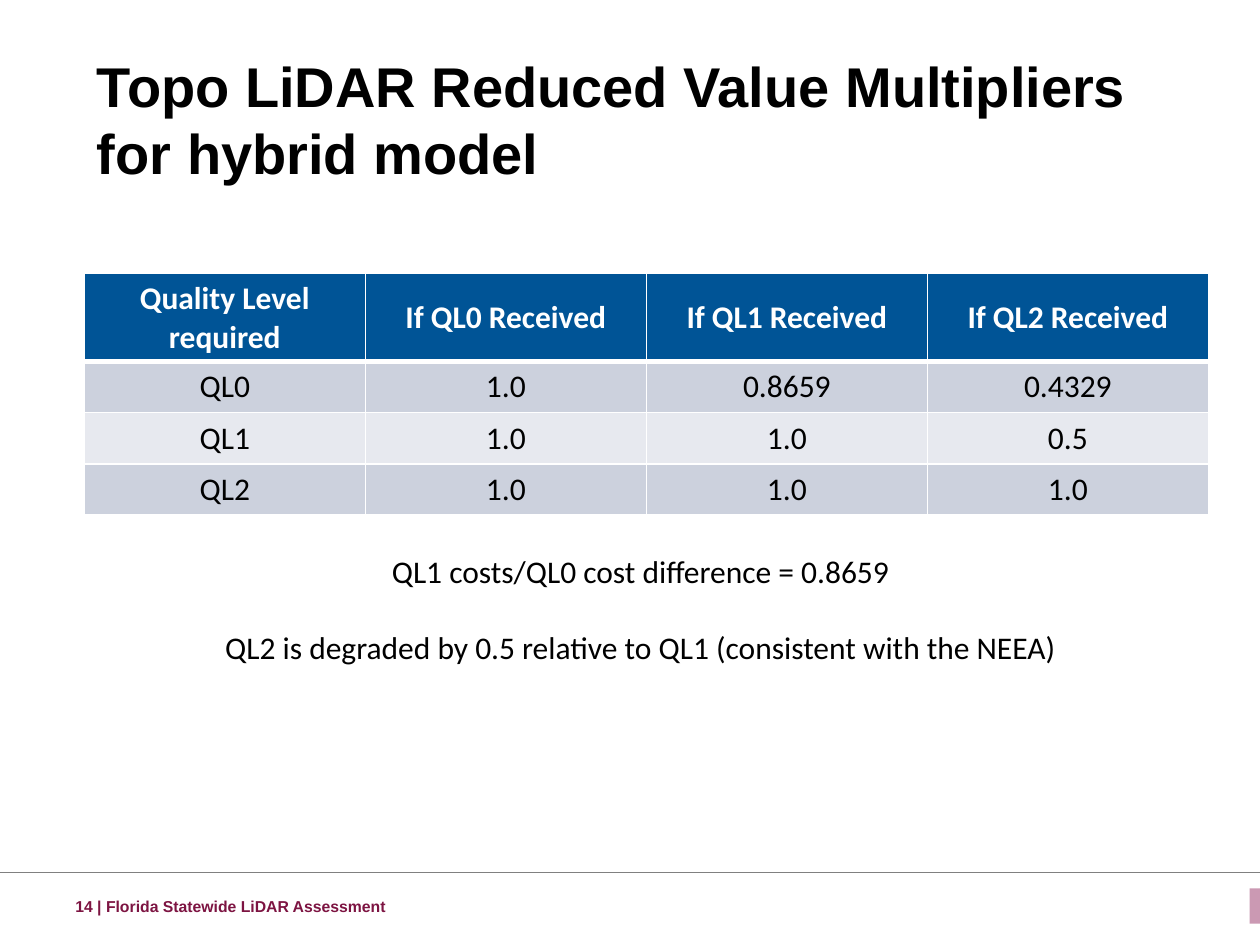
from typing import NamedTuple

from lxml.etree import SubElement
from pptx import Presentation
from pptx.dml.color import RGBColor
from pptx.enum.shapes import MSO_CONNECTOR as Line, MSO_SHAPE as Shape
from pptx.enum.text import MSO_ANCHOR as Anchor, MSO_AUTO_SIZE as Fit, PP_ALIGN as Align
from pptx.oxml.ns import qn
from pptx.util import Cm, Pt


class Box(NamedTuple):
    left: float
    top: float
    width: float
    height: float

    def lengths(self) -> list:
        return [Cm(value) for value in self]


class Look(NamedTuple):
    fill: str
    ink: str
    bold: bool


HEAD = Look("005496", "FFFFFF", True)
BANDS = [Look("CCD1DD", "000000", False), Look("E7E9EF", "000000", False)]
ROWS = [
    ["Quality Level required", "If QL0 Received", "If QL1 Received", "If QL2 Received"],
    ["QL0", "1.0", "0.8659", "0.4329"],
    ["QL1", "1.0", "1.0", "0.5"],
    ["QL2", "1.0", "1.0", "1.0"],
]
NOTES = [
    "QL1 costs/QL0 cost difference = 0.8659",
    "QL2 is degraded by 0.5 relative to QL1 (consistent with the NEEA)",
]


def paint(target, color: str) -> None:
    """Set a font or line colour, or a solid fill."""
    if hasattr(target, "solid"):
        target.solid()
        target = target.fore_color
    else:
        target = target.color
    target.rgb = RGBColor.from_string(color)


def style(par, color: str, align=Align.LEFT, **format) -> None:
    par.alignment = align
    for name, value in format.items():
        setattr(par.font, name, value)
    paint(par.font, color)


def place(shape, box: Box) -> None:
    for name, value in zip(box._fields, box.lengths()):
        setattr(shape, name, value)


def edge(cell, widths: dict) -> None:
    """Draw white borders; widths are points by side letter."""
    props = cell._tc.get_or_add_tcPr()
    for side, width in widths.items():
        line = SubElement(props, qn(f"a:ln{side}"), w=str(Pt(width)))
        SubElement(SubElement(line, qn("a:solidFill")), qn("a:srgbClr"), val="FFFFFF")


def add_grid(slide, box: Box) -> None:
    table = slide.shapes.add_table(len(ROWS), len(ROWS[0]), *box.lengths()).table
    for row in table.rows:
        row.height = Cm(1.03)
    table.rows[0].height = Cm(1.78)
    for r, texts in enumerate(ROWS):
        look = BANDS[(r - 1) % 2] if r else HEAD
        widths = {"L": 1, "R": 1, "T": 3 if r == 1 else 1, "B": 1 if r else 3}
        for c, text in enumerate(texts):
            cell = table.cell(r, c)
            cell.text = text
            cell.vertical_anchor = Anchor.MIDDLE
            edge(cell, widths)
            paint(cell.fill, look.fill)
            style(cell.text_frame.paragraphs[0], look.ink, Align.CENTER,
                  name="Calibri", size=Pt(18), bold=look.bold)


def add_text(slide, box: Box, lines: list[str], anchor, gap: int = 0):
    """Add a wrapped text box with a gap in points between its paragraphs."""
    frame = slide.shapes.add_textbox(*box.lengths()).text_frame
    frame.word_wrap = True
    frame.vertical_anchor = anchor
    frame.text = "\n".join(lines)
    for par in frame.paragraphs[1:]:
        par.space_before = Pt(gap)
    return frame


def add_trim(slide) -> None:
    """Draw the rule and the tab at the foot of the slide."""
    y = Cm(17.58)
    rule = slide.shapes.add_connector(Line.STRAIGHT, Cm(-0.85), y, Cm(26.25), y)
    rule.line.width = Pt(0.5)
    paint(rule.line, "808080")
    SubElement(rule._element.spPr, qn("a:effectLst"))

    tab = slide.shapes.add_shape(Shape.RECTANGLE, *Box(25.19, 17.91, 0.25, 0.71).lengths())
    tab.shadow.inherit = False
    tab.line.fill.background()
    paint(tab.fill, "CB99B3")


def main() -> None:
    deck = Presentation()
    deck.slide_width, deck.slide_height = Cm(25.4), Cm(19.05)
    slide = deck.slides.add_slide(deck.slide_layouts[5])
    add_trim(slide)

    title = slide.shapes.title
    place(title, Box(1.7, 1.6, 22.66, 1.57))
    frame = title.text_frame
    frame.text = "Topo LiDAR Reduced Value Multipliers for hybrid model"
    frame.auto_size = Fit.NONE
    frame.vertical_anchor = Anchor.MIDDLE
    style(frame.paragraphs[0], "000000", name="Arial", size=Pt(32), bold=True)

    foot = add_text(slide, Box(1.27, 17.98, 15.67, 0.56),
                    ["14 | Florida Statewide LiDAR Assessment"], Anchor.MIDDLE)
    style(foot.paragraphs[0], "7D1442", name="Arial", size=Pt(9), bold=True)

    add_grid(slide, Box(1.7, 5.51, 22.66, 4.87))

    notes = add_text(slide, Box(2.12, 11, 21.59, 5.64), NOTES, Anchor.TOP, gap=22)
    for par in notes.paragraphs:
        style(par, "000000", Align.CENTER, name="Calibri", size=Pt(18))

    deck.save("out.pptx")


if __name__ == "__main__":
    main()
